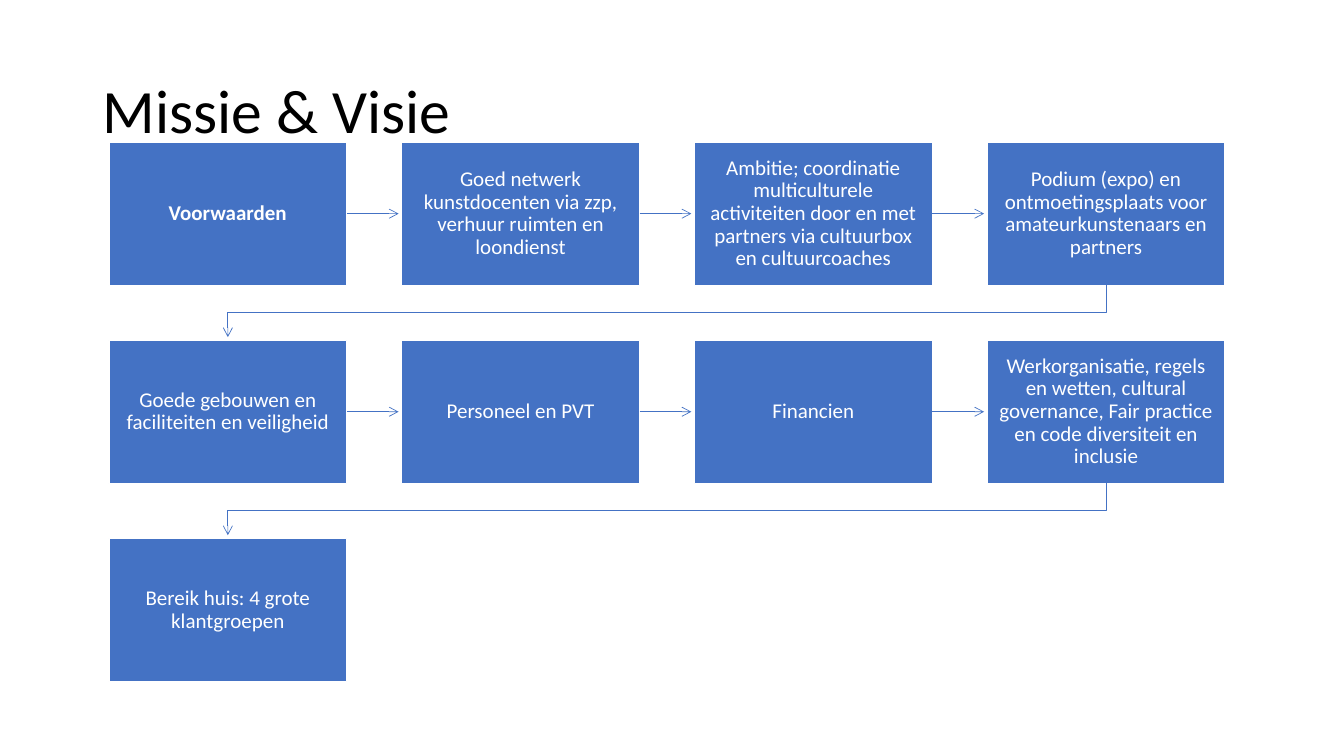
"""Build the Missie & Visie slide: a snaking flow of nine boxes."""
from dataclasses import dataclass

from lxml.etree import SubElement
from pptx import Presentation
from pptx.dml.color import RGBColor
from pptx.enum.shapes import MSO_CONNECTOR, MSO_SHAPE
from pptx.enum.text import MSO_ANCHOR, PP_ALIGN
from pptx.oxml.ns import qn
from pptx.util import Inches, Pt

TITLE = "Missie & Visie"
STEPS = [
    "Voorwaarden",
    "Goed netwerk kunstdocenten via zzp, verhuur ruimten en loondienst",
    "Ambitie; coordinatie multiculturele activiteiten door en met partners via cultuurbox en cultuurcoaches",
    "Podium (expo) en ontmoetingsplaats voor amateurkunstenaars en partners",
    "Goede gebouwen en faciliteiten en veiligheid",
    "Personeel en PVT",
    "Financien",
    "Werkorganisatie, regels en wetten, cultural governance, Fair practice en code diversiteit en inclusie",
    "Bereik huis: 4 grote klantgroepen",
]


@dataclass(frozen=True)
class Theme:
    font: str = "Calibri"
    blue: RGBColor = RGBColor(0x44, 0x72, 0xC4)
    white: RGBColor = RGBColor(0xFF, 0xFF, 0xFF)
    black: RGBColor = RGBColor(0, 0, 0)
    title: Pt = Pt(44)
    body: Pt = Pt(15)
    border: Pt = Pt(1)
    arrow: Pt = Pt(0.5)


THEME = Theme()
COLS, ROWS = 4, 3
LEFT, TOP, RIGHT, BOTTOM = 1.08, 1.41, 12.15, 6.76
BOX_W, BOX_H = 2.36, 1.42
STEP_X = (RIGHT - LEFT - BOX_W) / (COLS - 1)
STEP_Y = (BOTTOM - TOP - BOX_H) / (ROWS - 1)
CLEARANCE = 0.03
INSET = 0.12


def box_position(i):
    row, col = divmod(i, COLS)
    return LEFT + col * STEP_X, TOP + row * STEP_Y


def write(tf, text, size, color, bold=False, align=PP_ALIGN.LEFT):
    tf.word_wrap = True
    tf.vertical_anchor = MSO_ANCHOR.MIDDLE
    p = tf.paragraphs[0]
    p.alignment = align
    p.line_spacing = 0.9
    r = p.add_run()
    r.text = text
    r.font.name, r.font.size, r.font.bold = THEME.font, size, bold
    r.font.color.rgb = color


def add_box(s, i, text):
    x, y = box_position(i)
    sp = s.shapes.add_shape(MSO_SHAPE.RECTANGLE, Inches(x), Inches(y), Inches(BOX_W), Inches(BOX_H))
    sp.shadow.inherit = False
    sp.fill.solid()
    sp.fill.fore_color.rgb = THEME.blue
    sp.line.color.rgb = THEME.white
    sp.line.width = THEME.border
    tf = sp.text_frame
    tf.margin_left = tf.margin_right = tf.margin_top = tf.margin_bottom = Inches(INSET)
    write(tf, text, THEME.body, THEME.white, bold=i == 0, align=PP_ALIGN.CENTER)
    return sp


def style_arrow(sp):
    sp.line.color.rgb = THEME.blue
    sp.line.width = THEME.arrow
    spPr = sp._element.spPr
    SubElement(spPr.find(qn("a:ln")), qn("a:tailEnd"), type="arrow")
    SubElement(spPr, qn("a:effectLst"))


def add_straight_arrow(s, i, box):
    x, y = box_position(i)
    mid = Inches(y + BOX_H / 2)
    end = Inches(x + STEP_X - CLEARANCE)
    sp = s.shapes.add_connector(MSO_CONNECTOR.STRAIGHT, Inches(x + BOX_W), mid, end, mid)
    sp.begin_connect(box, 3)
    style_arrow(sp)


def add_return_arrow(s, i):
    x, y = box_position(i)
    next_x, next_y = box_position(i + 1)
    start_x, end_x = x + BOX_W / 2, next_x + BOX_W / 2
    turn_y = (y + BOX_H + next_y) / 2
    corners = [(start_x, turn_y), (end_x, turn_y), (end_x, next_y - CLEARANCE)]
    fb = s.shapes.build_freeform(Inches(start_x), Inches(y + BOX_H))
    fb.add_line_segments([(Inches(a), Inches(b)) for a, b in corners], close=False)
    sp = fb.convert_to_shape()
    sp.fill.background()
    style_arrow(sp)


def main():
    prs = Presentation()
    prs.slide_width, prs.slide_height = Inches(13.33), Inches(7.5)
    s = prs.slides.add_slide(prs.slide_layouts[6])
    title = s.shapes.add_textbox(Inches(0.92), Inches(0.4), Inches(11.5), Inches(1.45))
    write(title.text_frame, TITLE, THEME.title, THEME.black)
    boxes = [add_box(s, i, text) for i, text in enumerate(STEPS)]
    for i, box in enumerate(boxes[:-1]):
        if (i + 1) % COLS:
            add_straight_arrow(s, i, box)
        else:
            add_return_arrow(s, i)
    prs.save("out.pptx")


if __name__ == "__main__":
    main()
